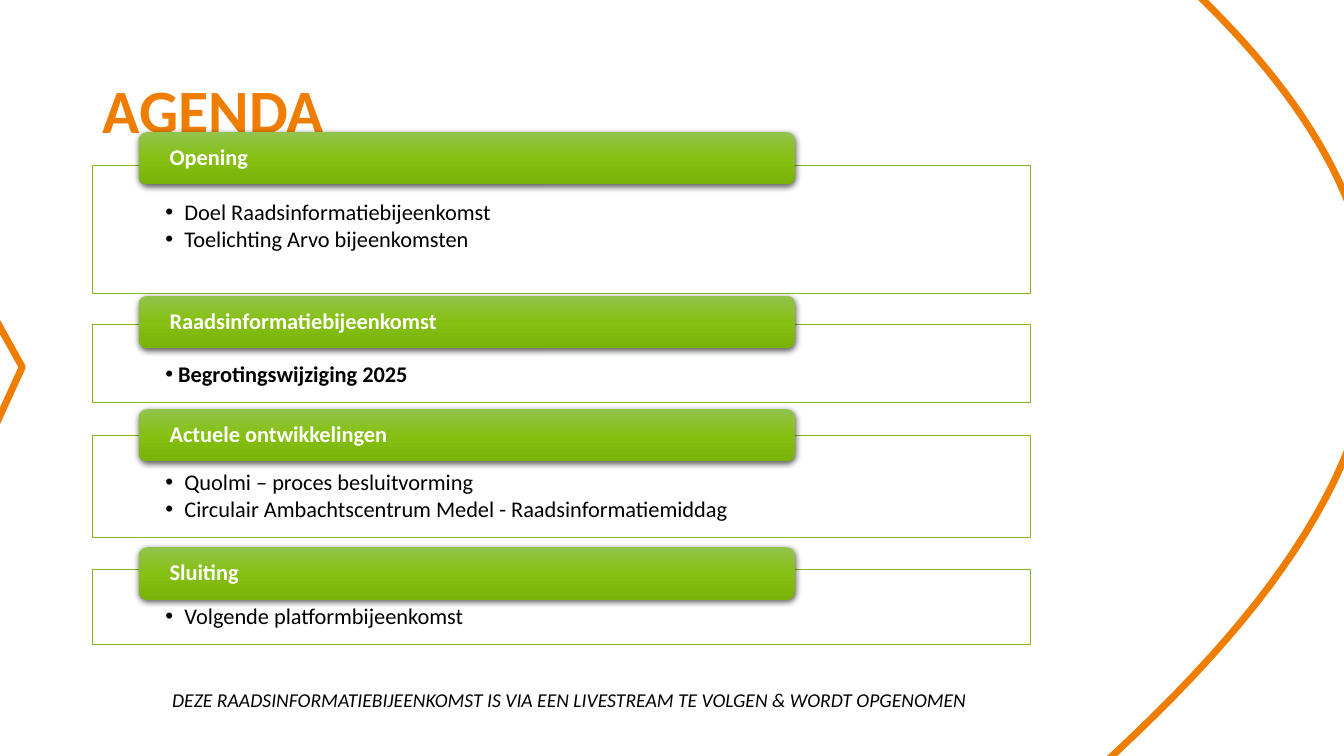
from copy import deepcopy
from dataclasses import dataclass

from lxml import etree
from pptx import Presentation
from pptx import util as u
from pptx.dml.color import RGBColor
from pptx.enum import shapes, text
from pptx.oxml import ns

ORANGE = RGBColor(0xEF, 0x7D, 0x00)
GREEN = RGBColor(0x83, 0xB8, 0x1A)
WHITE = RGBColor(0xFF, 0xFF, 0xFF)
BLACK = RGBColor(0x00, 0x00, 0x00)
BAR_STOPS = (
    (0.0, RGBColor(0x92, 0xC3, 0x4D)),
    (0.5, RGBColor(0x86, 0xC0, 0x12)),
    (1.0, RGBColor(0x79, 0xB2, 0x09)),
)
FONT = "Calibri"
FRAME_LEFT, FRAME_WIDTH = 2.34, 23.62
BAR_LEFT, BAR_WIDTH, BAR_HEIGHT = 3.5, 16.54, 1.32

Point = tuple[float, float]


@dataclass(frozen=True)
class AgendaItem:
    heading: str
    points: tuple[str, ...]
    bar_top: float
    frame_top: float
    frame_height: float
    bold: bool = False
    indent: float = 0.48


AGENDA = (
    AgendaItem("Opening", ("Doel Raadsinformatiebijeenkomst", "Toelichting Arvo bijeenkomsten"),
               3.33, 4.17, 3.23),
    AgendaItem("Raadsinformatiebijeenkomst", ("Begrotingswijziging 2025",),
               7.45, 8.17, 1.97, bold=True, indent=0.32),
    AgendaItem("Actuele ontwikkelingen",
               ("Quolmi – proces besluitvorming",
                "Circulair Ambachtscentrum Medel - Raadsinformatiemiddag"),
               10.31, 10.97, 2.58),
    AgendaItem("Sluiting", ("Volgende platformbijeenkomst",), 13.79, 14.35, 1.89),
)

# Each curve continues from the end of the one before: two controls, then the end.
ARC_START: Point = (27.79, -2.24)
ARC_CURVES: tuple[tuple[Point, Point, Point], ...] = (
    ((29.64, -0.74), (31.19, 0.74), (32.39, 2.34)),
    ((33.58, 3.94), (34.49, 5.77), (34.59, 7.85)),
    ((34.59, 8.76), (34.54, 9.4), (34.44, 9.75)),
    ((34.29, 10.57), (33.99, 11.35), (33.6, 12.17)),
    ((32.49, 14.43), (30.61, 16.71), (27.56, 19.48)),
)
CHEVRON: list[Point] = [(-0.66, 7.06), (0.56, 9.25), (-0.48, 11.53)]


def arc_points(steps: int = 16) -> list[Point]:
    points = [ARC_START]
    for control_1, control_2, end in ARC_CURVES:
        start = points[-1]
        for step in range(1, steps + 1):
            t = step / steps
            weights = ((1 - t) ** 3, 3 * t * (1 - t) ** 2, 3 * t * t * (1 - t), t ** 3)
            corners = (start, control_1, control_2, end)
            points.append((sum(w * c[0] for w, c in zip(weights, corners)),
                           sum(w * c[1] for w, c in zip(weights, corners))))
    return points


def add_outline(slide, points: list[Point]) -> None:
    emu = [(u.Cm(x), u.Cm(y)) for x, y in points]
    builder = slide.shapes.build_freeform(*emu[0])
    builder.add_line_segments(emu[1:], close=False)
    outline = builder.convert_to_shape()
    outline.shadow.inherit = False
    outline.fill.background()
    outline.line.color.rgb = ORANGE
    outline.line.width = u.Pt(5)


def write(shape, *lines: str, size: float = 16, color: RGBColor = BLACK,
          bold: bool = False, italic: bool = False, spacing: float = 0.9,
          after: float = 0, bullet_indent: float = 0,
          anchor=text.MSO_ANCHOR.MIDDLE,
          insets: tuple[float, float, float, float] = (0.25, 0.13, 0.25, 0.13)) -> None:
    """Fill a shape with paragraphs; insets are left, top, right, bottom in cm."""
    frame = shape.text_frame
    frame.word_wrap = True
    frame.vertical_anchor = anchor
    (frame.margin_left, frame.margin_top,
     frame.margin_right, frame.margin_bottom) = map(u.Cm, insets)
    for index, line in enumerate(lines):
        paragraph = frame.add_paragraph() if index else frame.paragraphs[0]
        paragraph.alignment = text.PP_ALIGN.LEFT
        paragraph.line_spacing = spacing
        paragraph.space_after = u.Pt(after)
        if bullet_indent:
            properties = paragraph._p.get_or_add_pPr()
            properties.set("marL", str(u.Cm(bullet_indent)))
            properties.set("indent", str(-u.Cm(bullet_indent)))
            etree.SubElement(properties, ns.qn("a:buFont"), typeface="Arial")
            etree.SubElement(properties, ns.qn("a:buChar"), char="•")
        run = paragraph.add_run()
        run.text = line
        font = run.font
        font.name, font.size, font.bold, font.italic = FONT, u.Pt(size), bold, italic
        font.color.rgb = color


def add_text(slide, line: str, left: float, top: float, width: float, height: float,
             **style) -> None:
    write(slide.shapes.add_textbox(u.Cm(left), u.Cm(top), u.Cm(width), u.Cm(height)),
          line, **style)


def add_frame(slide, item: AgendaItem) -> None:
    frame = slide.shapes.add_shape(
        shapes.MSO_SHAPE.RECTANGLE, u.Cm(FRAME_LEFT), u.Cm(item.frame_top),
        u.Cm(FRAME_WIDTH), u.Cm(item.frame_height))
    frame.shadow.inherit = False
    frame.fill.solid()
    frame.fill.fore_color.rgb = WHITE
    white = frame._element.spPr.find(".//" + ns.qn("a:srgbClr"))
    etree.SubElement(white, ns.qn("a:alpha"), val="90000")
    frame.line.color.rgb = GREEN
    frame.line.width = u.Pt(0.5)
    write(frame, *item.points, bold=item.bold, after=2, bullet_indent=item.indent,
          spacing=1.0 if item.bold else 0.9,
          anchor=text.MSO_ANCHOR.TOP, insets=(1.83, 0.91, 1.83, 0.3))


def add_heading_bar(slide, item: AgendaItem) -> None:
    bar = slide.shapes.add_shape(
        shapes.MSO_SHAPE.ROUNDED_RECTANGLE, u.Cm(BAR_LEFT), u.Cm(item.bar_top),
        u.Cm(BAR_WIDTH), u.Cm(BAR_HEIGHT))
    bar.line.fill.background()
    bar.fill.gradient()
    bar.fill.gradient_angle = 270
    properties = bar._element.spPr
    stop_list = properties.find(".//" + ns.qn("a:gsLst"))
    stop_list.append(deepcopy(stop_list[0]))
    for stop, (position, color) in zip(bar.fill.gradient_stops, BAR_STOPS):
        stop.position = position
        stop.color.rgb = color
    bar.shadow.inherit = False
    shadow = etree.SubElement(
        properties.find(ns.qn("a:effectLst")), ns.qn("a:outerShdw"),
        blurRad=str(u.Pt(4.5)), dist=str(u.Pt(1.5)), dir="5400000", rotWithShape="0")
    black = etree.SubElement(shadow, ns.qn("a:srgbClr"), val=str(BLACK))
    etree.SubElement(black, ns.qn("a:alpha"), val="63000")
    write(bar, item.heading, color=WHITE, bold=True, insets=(0.71, 0, 0.71, 0))


def main() -> None:
    deck = Presentation()
    deck.slide_width, deck.slide_height = u.Cm(33.87), u.Cm(19.05)
    slide = deck.slides.add_slide(deck.slide_layouts[6])
    add_outline(slide, arc_points())
    add_outline(slide, CHEVRON)
    add_text(slide, "AGENDA", 2.34, 1.02, 29.21, 3.68, size=44, color=ORANGE, bold=True)
    for item in AGENDA:
        add_frame(slide, item)
        add_heading_bar(slide, item)
    add_text(slide,
             "DEZE RAADSINFORMATIEBIJEENKOMST IS VIA EEN LIVESTREAM TE VOLGEN & WORDT OPGENOMEN",
             4.09, 17.17, 21.87, 1.09, size=14, italic=True, spacing=0.7)
    deck.save("out.pptx")


if __name__ == "__main__":
    main()
